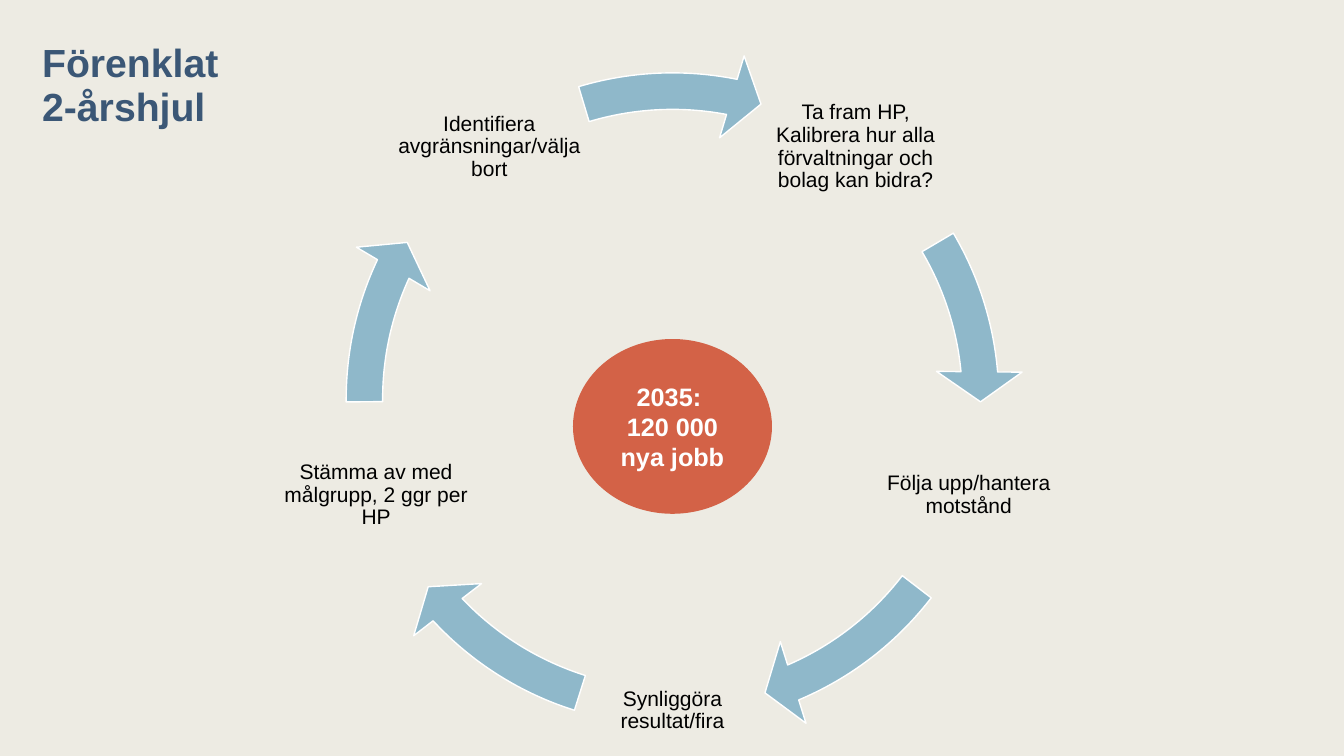
from math import cos, radians, sin

from pptx import Presentation
from pptx.dml.color import RGBColor
from pptx.enum.shapes import MSO_SHAPE
from pptx.enum.text import MSO_ANCHOR, PP_ALIGN
from pptx.util import Inches, Pt

CIRCULAR_ARROW = MSO_SHAPE.CIRCULAR_ARROW
OVAL = MSO_SHAPE.OVAL
MIDDLE = MSO_ANCHOR.MIDDLE
BOTTOM = MSO_ANCHOR.BOTTOM
CENTER = PP_ALIGN.CENTER
LEFT = PP_ALIGN.LEFT

FONT = "Arial"
WHEEL_X, WHEEL_Y = 6.67, 3.96
LABEL_RADIUS = 3.09
LABEL_SIZE = 1.86
ARROW_SIZE = 6.96
FIRST_ANGLE = -54

STEPS = [
    ("Ta fram HP, Kalibrera hur alla förvaltningar och bolag kan bidra?", 328.75, 6.7),
    ("Följa upp/hantera motstånd", 37.54, 66.93),
    ("Synliggöra resultat/fira", 107.48, 136.87),
    ("Stämma av med målgrupp, 2 ggr per HP", 179.5, 204.99),
    ("Identifiera avgränsningar/välja bort", 253.29, 281.11),
]
STEPS[0] = (STEPS[0][0], 329.42, 354.91)


def color(hex_code):
    return RGBColor.from_string(hex_code)


def write(shape, lines, size, hex_code, bold=False, align=CENTER, anchor=MIDDLE, spacing=None):
    frame = shape.text_frame
    frame.word_wrap = True
    frame.vertical_anchor = anchor
    for index, line in enumerate(lines):
        paragraph = frame.add_paragraph() if index else frame.paragraphs[0]
        paragraph.alignment = align
        if spacing:
            paragraph.line_spacing = spacing
        run = paragraph.add_run()
        run.text = line
        run.font.name = FONT
        run.font.size = Pt(size)
        run.font.bold = bold
        run.font.color.rgb = color(hex_code)


def add_filled(slide, kind, center_x, center_y, width, height, fill, line):
    shape = slide.shapes.add_shape(
        kind,
        Inches(center_x - width / 2),
        Inches(center_y - height / 2),
        Inches(width),
        Inches(height),
    )
    shape.shadow.inherit = False
    shape.fill.solid()
    shape.fill.fore_color.rgb = color(fill)
    shape.line.color.rgb = color(line)
    shape.line.width = Pt(1)
    return shape


def add_title(slide):
    title = slide.shapes.add_textbox(Inches(0.32), Inches(0.29), Inches(2.27), Inches(1.47))
    title.text_frame.margin_bottom = Inches(0.48)
    write(title, ["Förenklat 2-årshjul"], 28, "3B5776", True, LEFT, BOTTOM, Pt(31))


def add_step_label(slide, text, angle):
    left = WHEEL_X + LABEL_RADIUS * cos(radians(angle)) - LABEL_SIZE / 2
    top = WHEEL_Y + LABEL_RADIUS * sin(radians(angle)) - LABEL_SIZE / 2
    label = slide.shapes.add_textbox(
        Inches(left), Inches(top), Inches(LABEL_SIZE), Inches(LABEL_SIZE)
    )
    frame = label.text_frame
    frame.margin_left = frame.margin_right = Inches(0.02)
    frame.margin_top = frame.margin_bottom = Inches(0.02)
    write(label, [text], 15, "000000", spacing=0.9)


def add_step_arrow(slide, start, end):
    arrow = add_filled(
        slide, CIRCULAR_ARROW, WHEEL_X, WHEEL_Y, ARROW_SIZE, ARROW_SIZE, "8FB8CA", "FFFFFF"
    )
    settings = (0.052, 3.356, end * 0.6, start * 0.6, 0.061)
    for index, value in enumerate(settings):
        arrow.adjustments[index] = value


def add_goal(slide):
    goal = add_filled(slide, OVAL, WHEEL_X, 4.23, 1.96, 1.72, "D36247", "D36247")
    write(goal, ["2035: ", "120 000 nya jobb"], 18, "FFFFFF", True)


def main():
    presentation = Presentation()
    presentation.slide_width = Inches(13.33)
    presentation.slide_height = Inches(7.5)
    slide = presentation.slides.add_slide(presentation.slide_layouts[6])
    slide.background.fill.solid()
    slide.background.fill.fore_color.rgb = color("EDEBE3")

    add_title(slide)
    for index, (text, arrow_start, arrow_end) in enumerate(STEPS):
        add_step_label(slide, text, FIRST_ANGLE + index * 360 / len(STEPS))
        add_step_arrow(slide, arrow_start, arrow_end)
    add_goal(slide)
    presentation.save("out.pptx")


if __name__ == "__main__":
    main()
